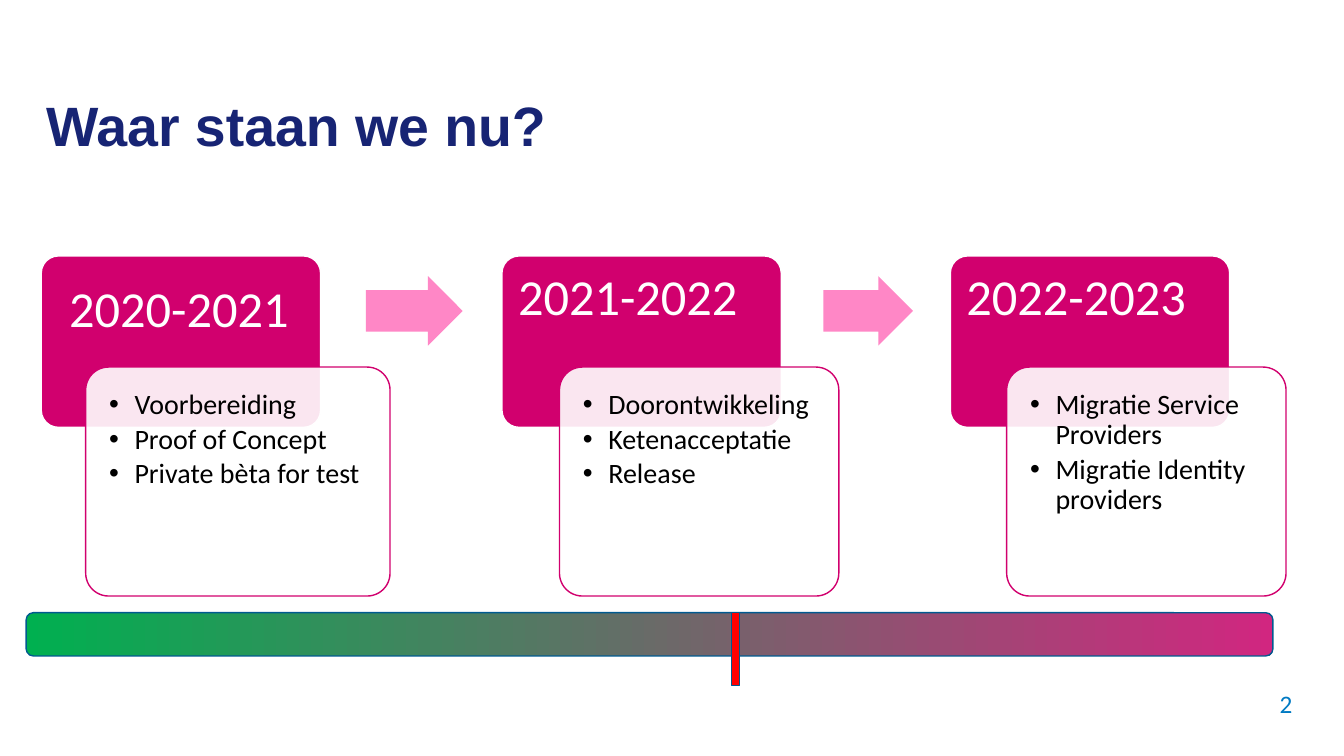
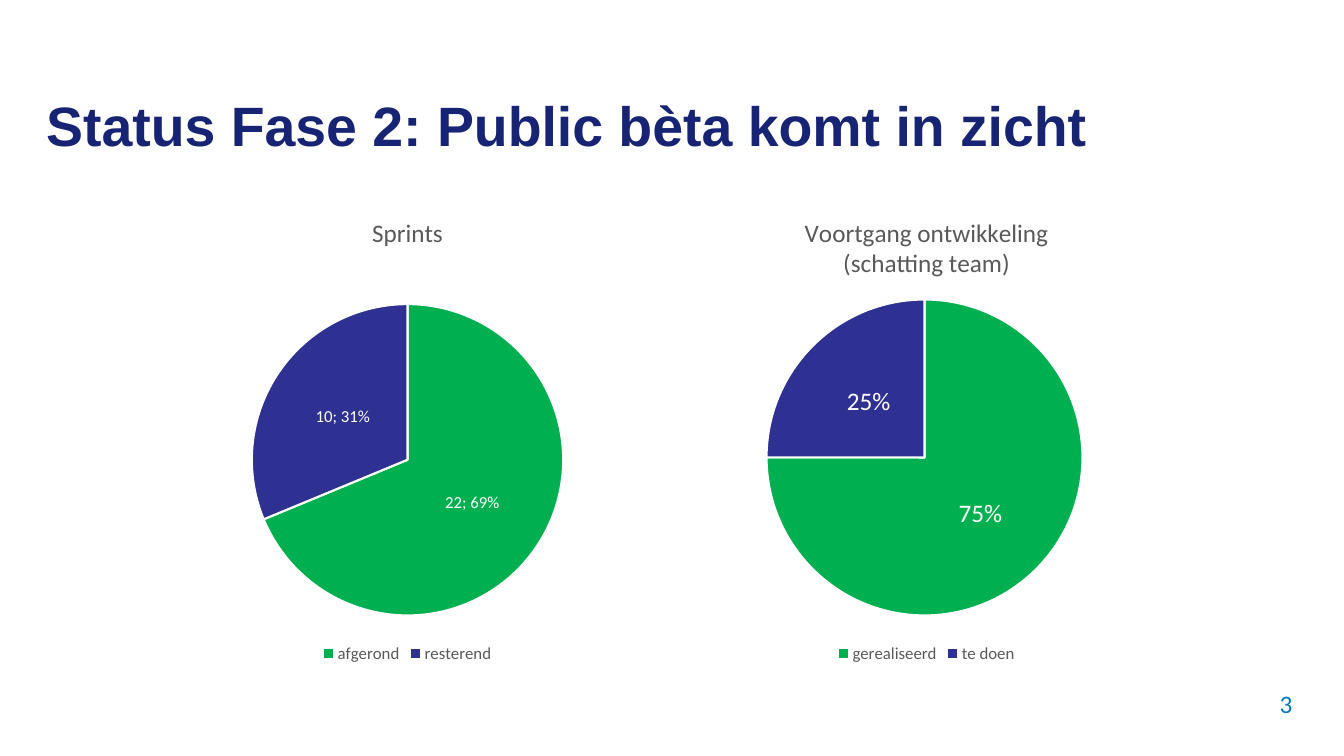
import lxml.etree
import pptx
import pptx.chart.data
import pptx.dml.color
import pptx.enum.chart
import pptx.enum.shapes
import pptx.enum.text
import pptx.oxml
import pptx.oxml.ns
import pptx.util

Cm = pptx.util.Cm
Pt = pptx.util.Pt
SHAPE = pptx.enum.shapes.MSO_SHAPE
ALIGN = pptx.enum.text.PP_ALIGN
ANCHOR = pptx.enum.text.MSO_ANCHOR
qn = pptx.oxml.ns.qn

MAGENTA, PINK, WHITE, BLACK = "D1006E", "FF87C6", "FFFFFF", "000000"
NAVY, BLUE, OUTLINE, GREY = "172474", "007AC3", "005A90", "595959"
GREEN, INDIGO, RED, RASPBERRY = "00B050", "2E3192", "FF0000", "D12680"
COMPARISON_LAYOUT, TITLE_ONLY_LAYOUT = 4, 5


def rgb(value):
    return pptx.dml.color.RGBColor.from_string(value)


def place(shape, left, top, width, height):
    shape.left, shape.top = Cm(left), Cm(top)
    shape.width, shape.height = Cm(width), Cm(height)


class Deck:
    def __init__(self):
        self.presentation = pptx.Presentation()
        self.presentation.slide_width = Cm(33.87)
        self.presentation.slide_height = Cm(19.05)
        self.slide = None

    def start(self, layout, title, number):
        self.slide = self.presentation.slides.add_slide(self.presentation.slide_layouts[layout])
        shape = self.slide.shapes.title
        place(shape, 0.91, 2.51, 31.52, 1.6)
        frame = self.frame(shape, ANCHOR.BOTTOM)
        self.run(frame.paragraphs[0], title, 39.6, NAVY, font="Arial", bold=True)
        box = self.slide.shapes.add_textbox(Cm(26.06), Cm(17.3), Cm(6.76), Cm(1.02))
        paragraph = self.frame(box, ANCHOR.TOP).paragraphs[0]
        self.run(paragraph, number, 18, BLUE, align=ALIGN.RIGHT)

    def frame(self, shape, anchor, inset=None):
        frame = shape.text_frame
        frame.word_wrap = True
        frame.auto_size = pptx.enum.text.MSO_AUTO_SIZE.NONE
        frame.vertical_anchor = anchor
        if inset is not None:
            frame.margin_left = frame.margin_top = Cm(inset)
            frame.margin_right = frame.margin_bottom = Cm(0.2)
        return frame

    def run(self, paragraph, text, size, color, align=ALIGN.LEFT, font="Calibri", bold=False):
        paragraph.alignment = align
        paragraph.line_spacing = 0.9
        run = paragraph.add_run()
        run.text = text
        self.font(run.font, size, color, font, bold)

    def font(self, font, size, color, name="Calibri", bold=False):
        font.name, font.size, font.bold = name, Pt(size), bold
        font.color.rgb = rgb(color)

    def shape(self, kind, box, fill, line=None, adjustment=None, opacity=None):
        shape = self.slide.shapes.add_shape(kind, *map(Cm, box))
        shape.shadow.inherit = False
        if isinstance(fill, tuple):
            shape.fill.gradient()
            shape.fill.gradient_angle = 0
            for position, (stop, color) in enumerate(zip(shape.fill.gradient_stops, fill)):
                stop.position = position
                stop.color.rgb = rgb(color)
        else:
            shape.fill.solid()
            shape.fill.fore_color.rgb = rgb(fill)
        if opacity:
            color = shape.element.spPr.find(qn("a:solidFill"))[0]
            lxml.etree.SubElement(color, qn("a:alpha")).set("val", str(opacity * 1000))
        if line:
            shape.line.color.rgb = rgb(line)
            shape.line.width = Pt(1)
        else:
            shape.line.fill.background()
        if adjustment:
            shape.adjustments[0] = adjustment
        return shape

    def period(self, box, text, inset):
        card = self.shape(SHAPE.ROUNDED_RECTANGLE, box, MAGENTA, WHITE, 0.1)
        frame = self.frame(card, ANCHOR.TOP, inset)
        frame.margin_right = 0
        self.run(frame.paragraphs[0], text, 36, WHITE)

    def panel(self, box, index, items):
        left, top, width, height = box
        self.shape(SHAPE.ROUNDED_RECTANGLE, box, WHITE, MAGENTA, 0.1, 90)
        body = self.slide.placeholders[index]
        body.element.getparent().append(body.element)
        place(body, left + 0.18, top + 0.18, width - 0.36, height - 0.36)
        frame = self.frame(body, ANCHOR.TOP, 0.41)
        for position, item in enumerate(items):
            paragraph = frame.add_paragraph() if position else frame.paragraphs[0]
            self.run(paragraph, item, 20, BLACK)
            paragraph.space_before, paragraph.space_after = Pt(0), Pt(3)
            self.bullet(paragraph)

    def bullet(self, paragraph):
        properties = paragraph._p.get_or_add_pPr()
        properties.set("marL", str(Cm(0.64)))
        properties.set("indent", str(-Cm(0.64)))
        lxml.etree.SubElement(properties, qn("a:buFont")).set("typeface", "Arial")
        lxml.etree.SubElement(properties, qn("a:buChar")).set("char", "•")

    def pie(self, left, title, values, number_format, label_size, show_percentage, plot_box):
        data = pptx.chart.data.CategoryChartData(number_format=number_format)
        data.categories = list(values)
        data.add_series("Series 1", list(values.values()))
        chart = self.slide.shapes.add_chart(
            pptx.enum.chart.XL_CHART_TYPE.PIE, Cm(left), Cm(4.93), Cm(10.08), Cm(11.89), data
        ).chart
        self.font(chart.font, 10, BLACK)
        chart.has_title = True
        run = chart.chart_title.text_frame.paragraphs[0].add_run()
        run.text = title
        self.font(run.font, 18, GREY)
        chart.has_legend = True
        chart.legend.position = pptx.enum.chart.XL_LEGEND_POSITION.BOTTOM
        chart.legend.include_in_layout = False
        self.font(chart.legend.font, 12, GREY)
        plot = chart.plots[0]
        plot.vary_by_categories = True
        for index, color in enumerate((GREEN, INDIGO)):
            point = plot.series[0].points[index].format
            point.fill.solid()
            point.fill.fore_color.rgb = rgb(color)
            point.line.color.rgb = rgb(WHITE)
            point.line.width = Pt(1.5)
        plot.has_data_labels = True
        labels = plot.data_labels
        labels.show_value = True
        labels.show_percentage = show_percentage
        labels.position = pptx.enum.chart.XL_LABEL_POSITION.CENTER
        self.font(labels.font, label_size, WHITE)
        if show_percentage:
            separator = lxml.etree.Element(qn("c:separator"))
            separator.text = "; "
            chart.element.xpath("//c:dLbls/c:showBubbleSize")[0].addnext(separator)
        else:
            labels.number_format = number_format
            labels.number_format_is_linked = False
        self.plot_layout(chart, plot_box)

    def plot_layout(self, chart, plot_box):
        area = chart.element.xpath("//c:plotArea")[0]
        for layout in area.findall(qn("c:layout")):
            area.remove(layout)
        layout = lxml.etree.Element(qn("c:layout"))
        manual = lxml.etree.SubElement(layout, qn("c:manualLayout"))
        settings = [("layoutTarget", "inner"), ("xMode", "edge"), ("yMode", "edge")]
        for name, value in settings + list(zip("xywh", plot_box)):
            lxml.etree.SubElement(manual, qn("c:" + name)).set("val", str(value))
        area.insert(0, layout)

    def remove_empty_placeholders(self):
        for placeholder in list(self.slide.placeholders):
            if not placeholder.text_frame.text:
                placeholder.element.getparent().remove(placeholder.element)


def build_timeline(deck):
    deck.start(COMPARISON_LAYOUT, "Waar staan we nu?", "2")
    phases = [
        ("2020-2021", 1.04, 0.58, 2.16, 7.67,
         ["Voorbereiding", "Proof of Concept", "Private bèta for test"]),
        ("2021-2022", 12.65, 0.28, 14.1, 7.04,
         ["Doorontwikkeling", "Ketenacceptatie", "Release"]),
        ("2022-2023", 23.95, 0.28, 25.37, 7.04,
         ["Migratie Service Providers", "Migratie Identity providers"]),
    ]
    for index, (period, left, inset, panel_left, panel_width, items) in enumerate(phases, 1):
        deck.period((left, 6.45, 7.04, 4.32), period, inset)
        deck.panel((panel_left, 9.25, panel_width, 5.77), index, items)
    for left, width in ((9.22, 2.44), (20.75, 2.26)):
        deck.shape(SHAPE.RIGHT_ARROW, (left, 6.96, width, 1.75), PINK, adjustment=0.6)
    deck.shape(SHAPE.ROUNDED_RECTANGLE, (0.66, 15.44, 31.42, 1.09), (GREEN, RASPBERRY), OUTLINE)
    deck.shape(SHAPE.RECTANGLE, (18.44, 15.44, 0.2, 1.83), RED, OUTLINE)
    deck.remove_empty_placeholders()


def build_status(deck):
    deck.start(TITLE_ONLY_LAYOUT, "Status Fase 2: Public bèta komt in zicht", "3")
    deck.pie(5.23, "Sprints", {"afgerond": 22, "resterend": 10},
             "General", 12, True, (0.11, 0.23, 0.78, 0.66))
    deck.pie(18.31, "Voortgang ontwikkeling (schatting team)", {"gerealiseerd": 0.75, "te doen": 0.25},
             "0%", 18, False, (0.1, 0.22, 0.79, 0.67))


def main():
    deck = Deck()
    build_timeline(deck)
    build_status(deck)
    deck.presentation.save("out.pptx")


if __name__ == "__main__":
    main()
